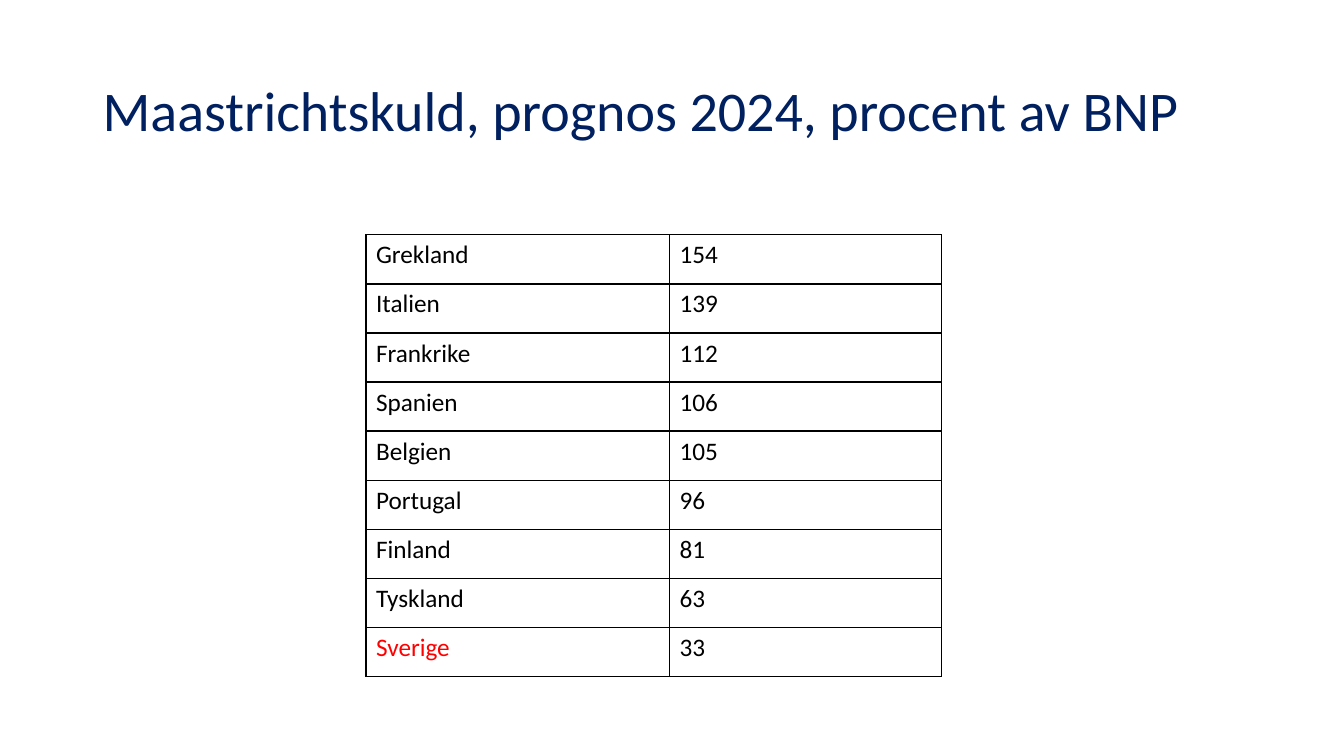
from lxml import etree
from pptx import Presentation
from pptx.dml.color import RGBColor
from pptx.enum.text import MSO_ANCHOR
from pptx.oxml.ns import qn
from pptx.util import Inches, Pt

MIDDLE = MSO_ANCHOR.MIDDLE
NAVY = RGBColor(0x00, 0x20, 0x60)
BLACK = RGBColor(0x00, 0x00, 0x00)
RED = RGBColor(0xFF, 0x00, 0x00)

WIDTH, HEIGHT = Inches(13.33), Inches(7.5)
HIGHLIGHT = "Sverige"
DEBT_SHARES = [
    ("Grekland", 154),
    ("Italien", 139),
    ("Frankrike", 112),
    ("Spanien", 106),
    ("Belgien", 105),
    ("Portugal", 96),
    ("Finland", 81),
    ("Tyskland", 63),
    (HIGHLIGHT, 33),
]


class DebtSlide:
    """Style and current slide; positions are given in inches."""

    font_name = "Calibri"
    title_size = Pt(40)
    cell_size = Pt(18)
    border_width = Pt(1)

    def __init__(self, deck):
        self.slide = deck.slides.add_slide(deck.slide_layouts[6])

    def format_text(self, frame, size, color):
        for para in frame.paragraphs:
            for span in para.runs:
                span.font.name = self.font_name
                span.font.size = size
                span.font.color.rgb = color

    def add_title(self, text, left, top, width, height):
        box = self.slide.shapes.add_textbox(*map(Inches, (left, top, width, height)))
        frame = box.text_frame
        frame.word_wrap = True
        frame.vertical_anchor = MIDDLE
        frame.text = text
        frame.paragraphs[0].line_spacing = 0.9
        self.format_text(frame, self.title_size, NAVY)

    def add_borders(self, cell):
        properties = cell._tc.get_or_add_tcPr()
        for position, side in enumerate(("lnL", "lnR", "lnT", "lnB")):
            line = etree.Element(qn(f"a:{side}"), w=str(self.border_width))
            fill = etree.SubElement(line, qn("a:solidFill"))
            etree.SubElement(fill, qn("a:srgbClr"), val=str(BLACK))
            properties.insert(position, line)

    def add_table(self, rows, left, top, column_widths, height):
        frame = self.slide.shapes.add_table(
            len(rows), len(column_widths), Inches(left), Inches(top),
            Inches(sum(column_widths)), Inches(height))
        table = frame.table
        table.first_row = table.horz_banding = False
        for column, width in zip(table.columns, column_widths):
            column.width = Inches(width)
        for row, values in zip(table.rows, rows):
            for cell, value in zip(row.cells, values):
                cell.text = str(value)
                cell.fill.background()
                color = RED if value == HIGHLIGHT else BLACK
                self.format_text(cell.text_frame, self.cell_size, color)
                self.add_borders(cell)


def main():
    deck = Presentation()
    deck.slide_width, deck.slide_height = WIDTH, HEIGHT
    page = DebtSlide(deck)
    page.add_title("Maastrichtskuld, prognos 2024, procent av BNP",
                   0.92, 0.4, 11.5, 1.45)
    page.add_table(DEBT_SHARES, 3.63, 2.33, (3.01, 2.7), 4.38)
    deck.save("out.pptx")


if __name__ == "__main__":
    main()
